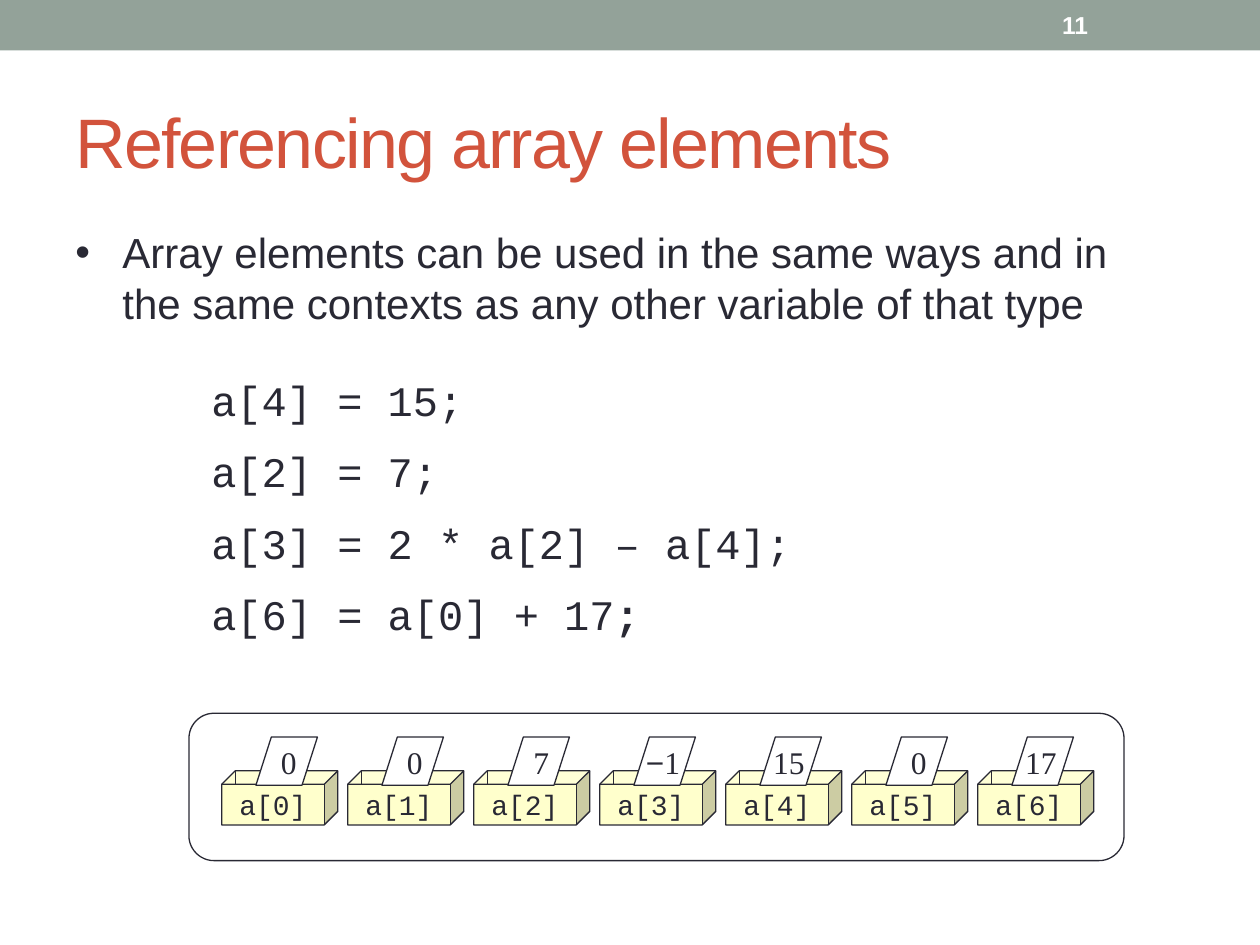
"""Builds the slide on referencing array elements."""
from dataclasses import dataclass, field
from typing import Any

import pptx
import pptx.dml.color
import pptx.enum.shapes
import pptx.enum.text
import pptx.oxml.ns
import pptx.util
from lxml import etree

Cm = pptx.util.Cm
Pt = pptx.util.Pt
RGBColor = pptx.dml.color.RGBColor
Shape = pptx.enum.shapes.MSO_SHAPE
Align = pptx.enum.text.PP_ALIGN
Anchor = pptx.enum.text.MSO_ANCHOR
AutoSize = pptx.enum.text.MSO_AUTO_SIZE
qn = pptx.oxml.ns.qn

INK = RGBColor(0x29, 0x29, 0x34)
RED = RGBColor(0xD2, 0x53, 0x3C)
SAGE = RGBColor(0x93, 0xA2, 0x99)
CREAM = RGBColor(0xFF, 0xFF, 0xCC)
WHITE = RGBColor(0xFF, 0xFF, 0xFF)

SANS, MONO, SERIF = "Arial", "Courier New", "Times New Roman"
PITCH = 2.54
FIRST_LEFT = 4.47
CARD_TOP, BOX_TOP = 14.86, 15.54

Box = tuple[float, float, float, float]


@dataclass
class Run:
    text: str
    size: float
    name: str = SANS
    color: RGBColor = INK
    bold: bool = False


@dataclass
class Para:
    runs: list[Run]
    format: dict[str, Any] = field(default_factory=dict)
    spaced: bool = False


def cm(box: Box) -> list[int]:
    return [Cm(v) for v in box]


def apply(target: Any, values: dict[str, Any]) -> None:
    for key, value in values.items():
        setattr(target, key, value)


def write(sp: Any, paras: list[Para], **frame: Any) -> None:
    tf = sp.text_frame
    apply(tf, {"word_wrap": True, **frame})
    for i, para in enumerate(paras):
        p = tf.add_paragraph() if i else tf.paragraphs[0]
        apply(p, para.format)
        if para.spaced:
            before = etree.SubElement(p._p.get_or_add_pPr(), qn("a:spcBef"))
            etree.SubElement(before, qn("a:spcPct"), val="50000")
        for run in para.runs:
            r = p.add_run()
            r.text = run.text
            apply(r.font, {"size": Pt(run.size), "name": run.name, "bold": run.bold})
            r.font.color.rgb = run.color


def add_text(shapes: Any, box: Box, paras: list[Para], **frame: Any) -> Any:
    sp = shapes.add_textbox(*cm(box))
    write(sp, paras, **frame)
    return sp


def add_shape(shapes: Any, kind: Any, box: Box, fill: RGBColor | None = None,
              line: RGBColor | None = INK, adj: float | None = None) -> Any:
    sp = shapes.add_shape(kind, *cm(box))
    sp.shadow.inherit = False
    if fill is None:
        sp.fill.background()
    else:
        sp.fill.solid()
        sp.fill.fore_color.rgb = fill
    if line is None:
        sp.line.fill.background()
    else:
        sp.line.color.rgb = line
        sp.line.width = Pt(0.75)
    if adj is not None:
        sp.adjustments[0] = adj
    return sp


def add_line(shapes: Any, x: float, top: float, bottom: float) -> None:
    straight = pptx.enum.shapes.MSO_CONNECTOR.STRAIGHT
    s = shapes.add_connector(straight, Cm(x), Cm(top), Cm(x), Cm(bottom))
    s.line.color.rgb = INK
    s.line.width = Pt(0.75)
    etree.SubElement(s._element.spPr, qn("a:effectLst"))


def add_element(shapes: Any, index: int, value: list[Run]) -> None:
    group = shapes.add_group_shape().shapes
    left = FIRST_LEFT + index * PITCH
    centred = {"alignment": Align.CENTER}
    cube = add_shape(group, Shape.CUBE, (left, BOX_TOP, 2.34, 1.09), CREAM, adj=0.25)
    write(cube, [Para([Run(f"a[{index}]", 16, MONO)], centred)],
          word_wrap=False, vertical_anchor=Anchor.MIDDLE)
    add_shape(group, Shape.PARALLELOGRAM, (left + 0.69, CARD_TOP, 1.24, 0.97),
              WHITE, adj=0.32)
    add_line(group, left + 0.28, BOX_TOP, BOX_TOP + 0.26)
    add_text(group, (left + 0.64, CARD_TOP, 1.27, 1.02),
             [Para(value, centred, True)], auto_size=AutoSize.SHAPE_TO_FIT_TEXT)


def main() -> None:
    prs = pptx.Presentation()
    prs.slide_width, prs.slide_height = Cm(25.4), Cm(19.05)
    shapes = prs.slides.add_slide(prs.slide_layouts[6]).shapes

    add_shape(shapes, Shape.RECTANGLE, (0, 0, 25.4, 1.02), SAGE, None)
    title = add_text(shapes, (1.27, 1.47, 22.86, 2.74),
                     [Para([Run("Referencing array elements", 40, color=RED)])],
                     vertical_anchor=Anchor.MIDDLE)
    title.text_frame.paragraphs[0].runs[0].font._element.set("spc", "-100")

    statement = ("Array elements can be used in the same ways and in "
                 "the same contexts as any other variable of that type")
    bullet = add_text(shapes, (1.27, 4.45, 22.35, 2.31),
                      [Para([Run(statement, 24)], spaced=True)],
                      auto_size=AutoSize.SHAPE_TO_FIT_TEXT)
    pPr = bullet.text_frame.paragraphs[0]._p.get_or_add_pPr()
    pPr.set("marL", str(Cm(0.95)))
    pPr.set("indent", str(-Cm(0.95)))
    etree.SubElement(pPr, qn("a:buFont"), typeface=SANS)
    etree.SubElement(pPr, qn("a:buChar"), char="•")

    values = [
        [Run(" 0", 18, SERIF)],
        [Run(" 0", 18, SERIF)],
        [Run(" ", 18), Run("7", 18, SERIF)],
        [Run("−", 18), Run("1", 18, SERIF)],
        [Run("15", 18, SERIF)],
        [Run(" 0", 18, SERIF)],
        [Run("17", 18, SERIF)],
    ]
    for index, value in enumerate(values):
        add_element(shapes, index, value)
    add_shape(shapes, Shape.ROUNDED_RECTANGLE, (3.81, 14.38, 18.85, 2.97), adj=0.17)

    statements = ["a[4] = 15;", "a[2] = 7;", "a[3] = 2 * a[2] – a[4];", "a[6] = a[0] + 17"]
    code = [Para([Run(text, 24, MONO)], spaced=True) for text in statements]
    code[-1].runs.append(Run(";", 24, MONO, bold=True))
    add_text(shapes, (4.01, 7.42, 18.42, 5.89), code,
             auto_size=AutoSize.SHAPE_TO_FIT_TEXT)

    add_text(shapes, (21.16, 0.05, 2.97, 0.91),
             [Para([Run("11", 14, color=WHITE, bold=True)])],
             vertical_anchor=Anchor.MIDDLE)
    prs.save("out.pptx")


if __name__ == "__main__":
    main()
